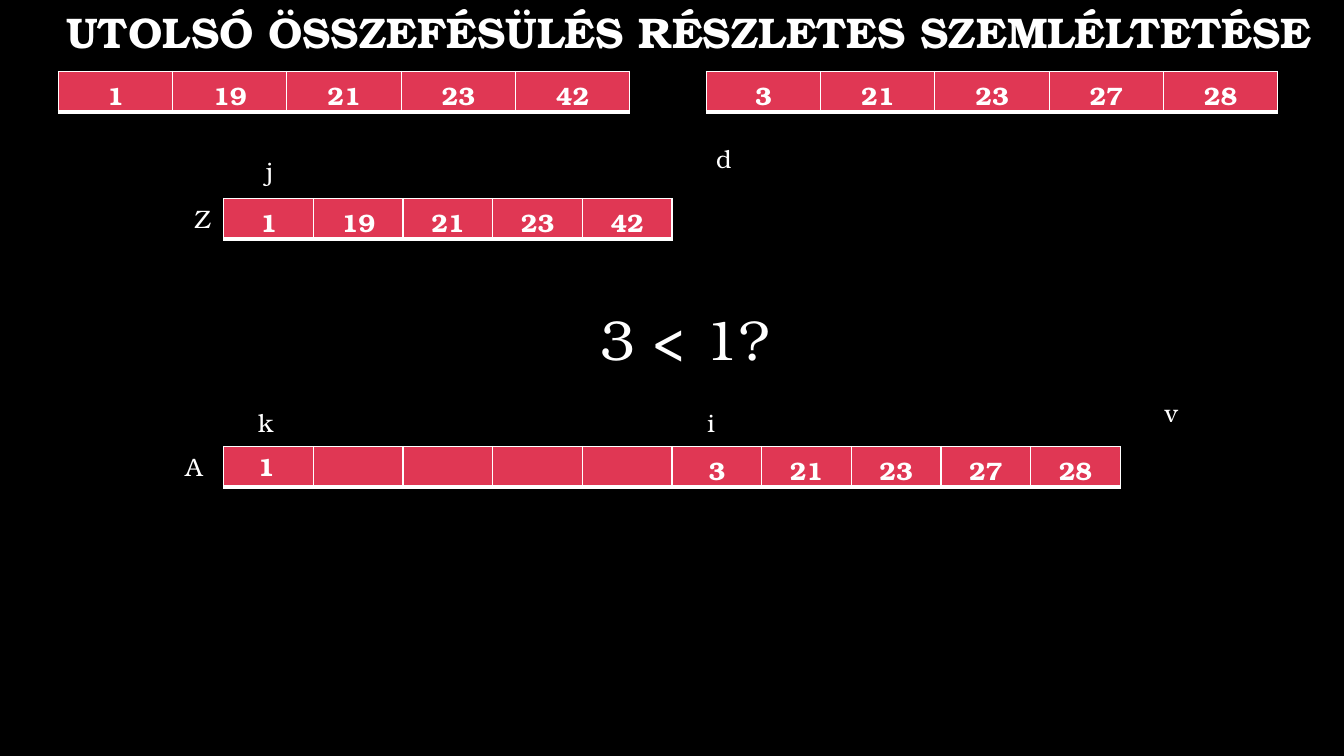
import pptx
import pptx.dml.color
import pptx.enum.text
import pptx.oxml
import pptx.oxml.ns
import pptx.util
from pptx.util import Cm

WHITE = pptx.dml.color.RGBColor(0xFF, 0xFF, 0xFF)
BLACK = pptx.dml.color.RGBColor(0x00, 0x00, 0x00)
RED = pptx.dml.color.RGBColor(0xE0, 0x37, 0x54)
FONT = "TeX Gyre Bonum"
CENTER = pptx.enum.text.PP_ALIGN.CENTER
MIDDLE = pptx.enum.text.MSO_ANCHOR.MIDDLE

# Content: lengths in cm
TITLE = "UTOLSÓ ÖSSZEFÉSÜLÉS RÉSZLETES SZEMLÉLTETÉSE"
LEFT_HALF = ["1", "19", "21", "23", "42"]
RIGHT_HALF = ["3", "21", "23", "27", "28"]
ROW_HEIGHT = 1.03
ARRAYS = [  # left, top, cell width, values
    (1.47, 1.8, 2.88, LEFT_HALF),
    (17.8, 1.8, 2.88, RIGHT_HALF),
    (5.64, 5, 2.26, LEFT_HALF),
    (5.64, 11.25, 2.26, [""] * 5 + RIGHT_HALF),
]
LABELS = [  # text, left, top, width
    ("Z", 4.65, 5, 1),
    ("A", 4.42, 11.25, 1),
    ("i", 17.58, 10.13, 2.39),
    ("j", 6.45, 3.78, 2.39),
    ("k", 6.25, 10.13, 2.39),
    ("d", 17.8, 3.48, 2.39),
    ("v", 29.11, 9.88, 2.39),
]
BORDERS = {"lnL": 1, "lnR": 1, "lnT": 1, "lnB": 3}  # widths in points


def write(frame, text, size=18, bold=False, align=None, spacing=None):
    para = frame.paragraphs[0]
    para.alignment = align
    para.line_spacing = spacing
    span = para.add_run()
    span.text = text
    span.font.name = FONT
    span.font.size = pptx.util.Pt(size)
    span.font.bold = bold
    span.font.color.rgb = WHITE


def add_text(page, text, left, top, width, height=1.03, anchor=None, **style):
    box = page.shapes.add_textbox(Cm(left), Cm(top), Cm(width), Cm(height))
    box.text_frame.word_wrap = True
    box.text_frame.vertical_anchor = anchor
    write(box.text_frame, text, **style)


def add_borders(cell):
    properties = cell._tc.get_or_add_tcPr()
    for side, points in BORDERS.items():
        properties.append(pptx.oxml.parse_xml(
            f'<a:{side} {pptx.oxml.ns.nsdecls("a")} w="{pptx.util.Pt(points)}">'
            f'<a:solidFill><a:srgbClr val="{WHITE}"/></a:solidFill></a:{side}>'))


def add_array(page, left, top, cell_width, values):
    table = page.shapes.add_table(
        1, len(values), Cm(left), Cm(top),
        Cm(cell_width * len(values)), Cm(ROW_HEIGHT)).table
    table.first_row = table.horz_banding = False
    for column, value in enumerate(values):
        table.columns[column].width = Cm(cell_width)
        cell = table.cell(0, column)
        add_borders(cell)
        cell.fill.solid()
        cell.fill.fore_color.rgb = RED
        if value:
            write(cell.text_frame, value, bold=True, align=CENTER)


def main():
    deck = pptx.Presentation()
    deck.slide_width, deck.slide_height = Cm(33.87), Cm(19.05)
    page = deck.slides.add_slide(deck.slide_layouts[6])
    page.background.fill.solid()
    page.background.fill.fore_color.rgb = BLACK

    # Title
    add_text(page, TITLE, 0.56, 0, 33.6, 1.73, anchor=MIDDLE,
             size=30.6, bold=True, align=CENTER, spacing=0.9)

    # Arrays and their index labels
    for array in ARRAYS:
        add_array(page, *array)
    for label in LABELS:
        add_text(page, *label)

    # Value just merged and the current comparison
    add_text(page, "1", 6.25, 11.25, 2.06, bold=True)
    add_text(page, "3 < 1?", 14.88, 7.54, 10.9, 1.96, size=40)

    deck.save("out.pptx")


if __name__ == "__main__":
    main()
